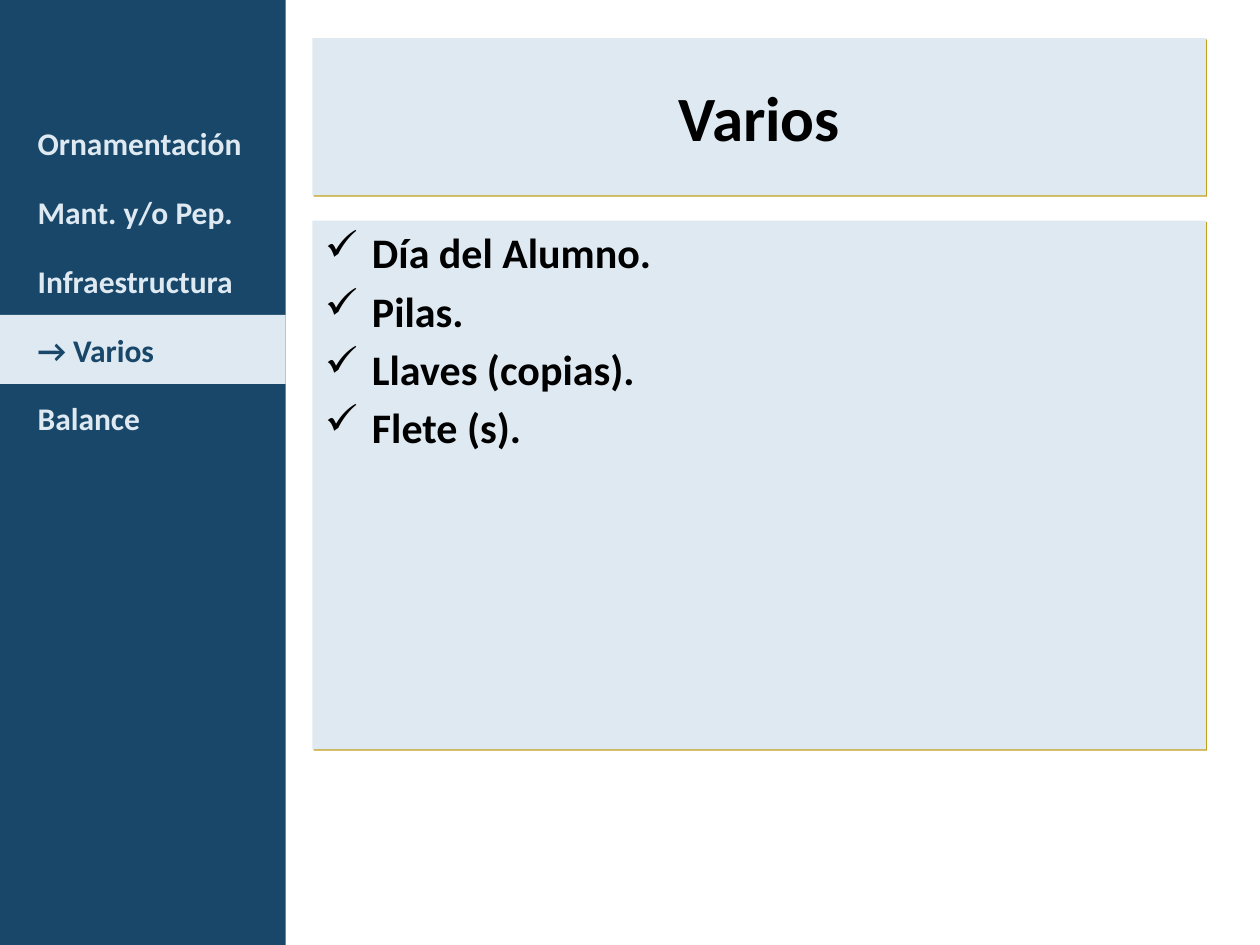
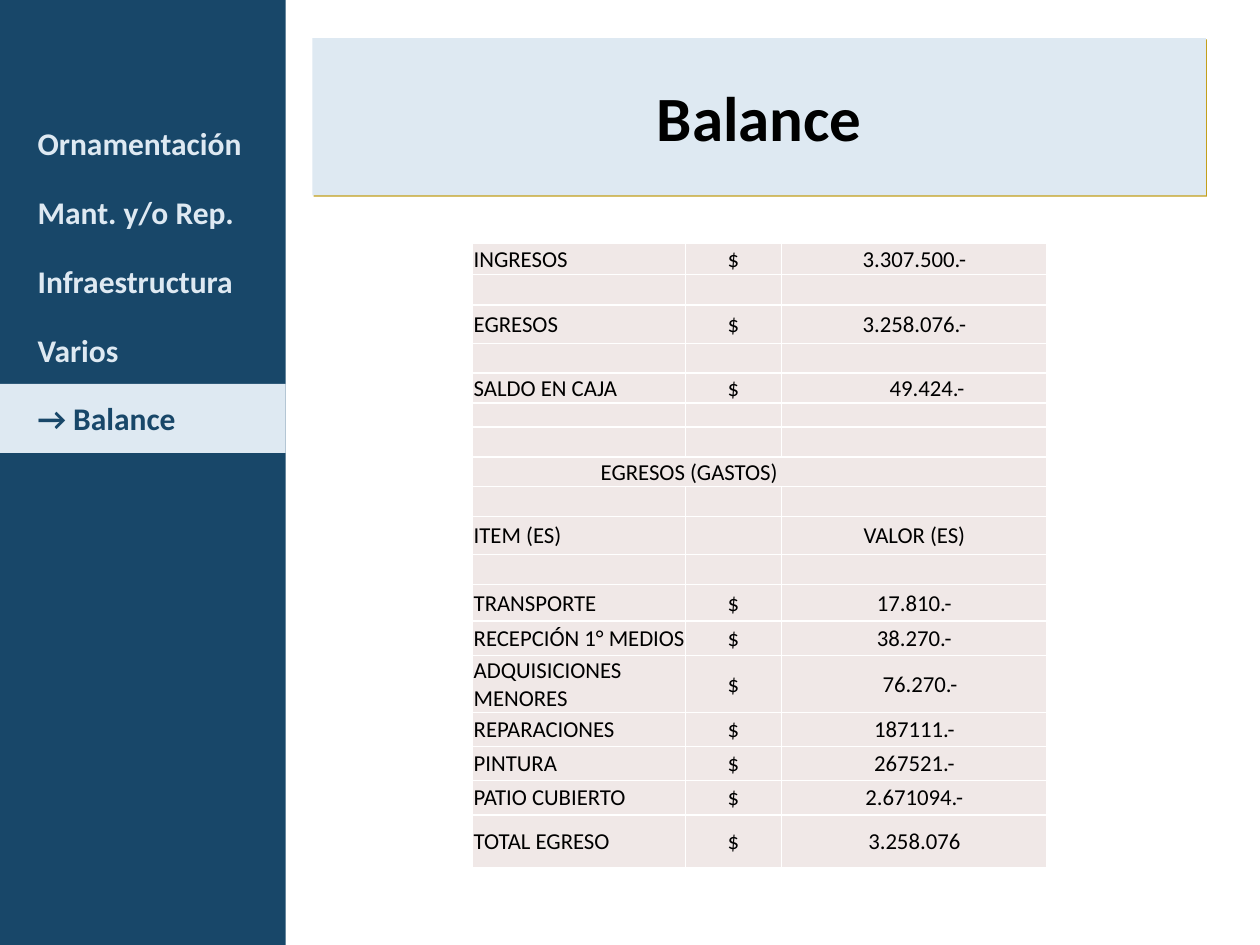
"""Build two treasury report slides with a navigation sidebar."""
from lxml import etree
from pptx import Presentation
from pptx.dml.color import RGBColor
from pptx.enum.shapes import MSO_SHAPE
from pptx.enum.text import MSO_ANCHOR, PP_ALIGN
from pptx.oxml.ns import qn
from pptx.util import Cm, Pt

RECTANGLE = MSO_SHAPE.RECTANGLE
MIDDLE, TOP = MSO_ANCHOR.MIDDLE, MSO_ANCHOR.TOP
LEFT, CENTER, JUSTIFY = PP_ALIGN.LEFT, PP_ALIGN.CENTER, PP_ALIGN.JUSTIFY

NAVY = RGBColor(0x18, 0x47, 0x69)
PALE_BLUE = RGBColor(0xDE, 0xE9, 0xF2)
GOLD = RGBColor(0xC3, 0x9F, 0x1B)
CELL_PINK = RGBColor(0xF0, 0xE8, 0xE7)
BLACK = RGBColor(0, 0, 0)
WHITE = RGBColor(0xFF, 0xFF, 0xFF)
FONT = "Calibri"

VARIOS_TABS = ["Ornamentación", "Mant. y/o Pep.", "Infraestructura", "Varios", "Balance"]
BALANCE_TABS = ["Ornamentación", "Mant. y/o Rep.", "Infraestructura", "Varios", "Balance"]
VARIOS_ITEMS = ["Día del Alumno.", "Pilas.", "Llaves (copias).", "Flete (s)."]

EMPTY = ("", "", "")
BALANCE_ROWS = [
    (0.62, ("INGRESOS", "$", "3.307.500.-")),
    (0.62, EMPTY),
    (0.77, ("EGRESOS", "$", "3.258.076.-")),
    (0.6, EMPTY),
    (0.6, ("SALDO EN CAJA", "$", "49.424.-")),
    (0.49, EMPTY),
    (0.6, EMPTY),
    (0.6, ("EGRESOS (GASTOS)", "", "")),
    (0.6, EMPTY),
    (0.77, ("ITEM (ES)", "", "VALOR (ES)")),
    (0.6, EMPTY),
    (0.74, ("TRANSPORTE", "$", "17.810.-")),
    (0.7, ("RECEPCIÓN 1° MEDIOS", "$", "38.270.-")),
    (1.14, ("ADQUISICIONES MENORES", "$", "76.270.-")),
    (0.69, ("REPARACIONES", "$", "187111.-")),
    (0.69, ("PINTURA", "$", "267521.-")),
    (0.69, ("PATIO CUBIERTO", "$", "2.671094.-")),
    (1.07, ("TOTAL EGRESO", "$", "3.258.076")),
]
COLUMN_WIDTHS = (4.29, 1.93, 5.36)
COLUMN_ALIGNMENTS = (LEFT, CENTER, CENTER)
SECTION_ROW = 7
TEXT_OFFSETS = {"EGRESOS (GASTOS)": 2.58, "49.424.-": 0.53, "76.270.-": 0.25}

PAGE_WIDTH, PAGE_HEIGHT = 25.4, 19.05
SIDEBAR_WIDTH = 5.76
TAB_TOP, TAB_HEIGHT = 2.18, 1.39
PANEL_LEFT, PANEL_WIDTH = 6.3, 18.01
TITLE_TOP, TITLE_HEIGHT = 0.77, 3.17
BODY_TOP, BODY_HEIGHT = 4.45, 10.66
TABLE_LEFT, TABLE_TOP = 9.53, 4.91


def add_box(page, left, top, width, height, fill=None):
    box = page.shapes.add_shape(RECTANGLE, Cm(left), Cm(top), Cm(width), Cm(height))
    box.shadow.inherit = False
    box.line.fill.background()
    if fill is None:
        box.fill.background()
    else:
        box.fill.solid()
        box.fill.fore_color.rgb = fill
    return box


def add_color(parent, color):
    solid = etree.SubElement(parent, qn("a:solidFill"))
    etree.SubElement(solid, qn("a:srgbClr"), val=str(color))


def format_para(para, size, color, bold, alignment):
    para.alignment = alignment
    for span in para.runs:
        span.font.name = FONT
        span.font.size = Pt(size)
        span.font.bold = bold
        span.font.color.rgb = color


def write(box, lines, size, color, alignment, anchor=MIDDLE):
    frame = box.text_frame
    frame.word_wrap = True
    frame.vertical_anchor = anchor
    frame.text = "\n".join(lines)
    for para in frame.paragraphs:
        format_para(para, size, color, True, alignment)
    return frame


def add_panel(page, top, height):
    panel = add_box(page, PANEL_LEFT, top, PANEL_WIDTH, height, PALE_BLUE)
    effects = panel._element.spPr.find(qn("a:effectLst"))
    shadow = etree.SubElement(effects, qn("a:outerShdw"), blurRad="0", dist=str(Pt(1)),
                              dir=str(50 * 60000), algn="tl", rotWithShape="0")
    etree.SubElement(shadow, qn("a:srgbClr"), val=str(GOLD))
    return panel


def add_page(deck, title, tabs):
    page = deck.slides.add_slide(deck.slide_layouts[6])
    add_box(page, 0, 0, SIDEBAR_WIDTH, PAGE_HEIGHT, NAVY)
    heading = write(add_panel(page, TITLE_TOP, TITLE_HEIGHT), [title], 36, BLACK, CENTER)
    heading.paragraphs[0].space_before = Pt(4)
    for index, name in enumerate(tabs):
        active = name == title
        tab = add_box(page, 0, TAB_TOP + index * TAB_HEIGHT, SIDEBAR_WIDTH, TAB_HEIGHT,
                      PALE_BLUE if active else None)
        label = f"→ {name}" if active else name
        frame = write(tab, [label], 18, NAVY if active else PALE_BLUE, LEFT)
        frame.margin_left = Cm(0.76)
        frame.margin_right = 0
    return page


def add_checklist(page, items):
    frame = write(add_panel(page, BODY_TOP, BODY_HEIGHT), items, 24, BLACK, JUSTIFY, TOP)
    for para in frame.paragraphs:
        para.space_after = Pt(4.5)
        properties = para._p.get_or_add_pPr()
        properties.set("marL", str(Cm(0.95)))
        properties.set("indent", str(-Cm(0.95)))
        etree.SubElement(properties, qn("a:buChar"), char="✓")


def format_cell(cell, text, alignment):
    cell.text = text
    cell.vertical_anchor = MIDDLE
    cell.margin_left = Cm(TEXT_OFFSETS.get(text, 0.02))
    cell.margin_right = cell.margin_top = Cm(0.02)
    cell.margin_bottom = 0
    para = cell.text_frame.paragraphs[0]
    format_para(para, 13, BLACK, False, alignment)
    if not text:
        etree.SubElement(para._p, qn("a:endParaRPr"), sz="1000")
    properties = cell._tc.get_or_add_tcPr()
    for side in ("a:lnL", "a:lnR", "a:lnT", "a:lnB"):
        add_color(etree.SubElement(properties, qn(side), w=str(Pt(1))), WHITE)
    cell.fill.solid()
    cell.fill.fore_color.rgb = CELL_PINK


def add_balance_table(page):
    total_height = sum(height for height, _ in BALANCE_ROWS)
    table = page.shapes.add_table(len(BALANCE_ROWS), len(COLUMN_WIDTHS), Cm(TABLE_LEFT),
                                  Cm(TABLE_TOP), Cm(sum(COLUMN_WIDTHS)),
                                  Cm(total_height)).table
    table.first_row = False
    table.horz_banding = False
    for column, width in zip(table.columns, COLUMN_WIDTHS):
        column.width = Cm(width)
    for row, (height, texts) in zip(table.rows, BALANCE_ROWS):
        row.height = Cm(height)
        for cell, text, alignment in zip(row.cells, texts, COLUMN_ALIGNMENTS):
            format_cell(cell, text, alignment)
    table.cell(SECTION_ROW, 0).merge(table.cell(SECTION_ROW, len(COLUMN_WIDTHS) - 1))


def main():
    deck = Presentation()
    deck.slide_width, deck.slide_height = Cm(PAGE_WIDTH), Cm(PAGE_HEIGHT)
    add_checklist(add_page(deck, "Varios", VARIOS_TABS), VARIOS_ITEMS)
    add_balance_table(add_page(deck, "Balance", BALANCE_TABS))
    deck.save("out.pptx")


if __name__ == "__main__":
    main()
